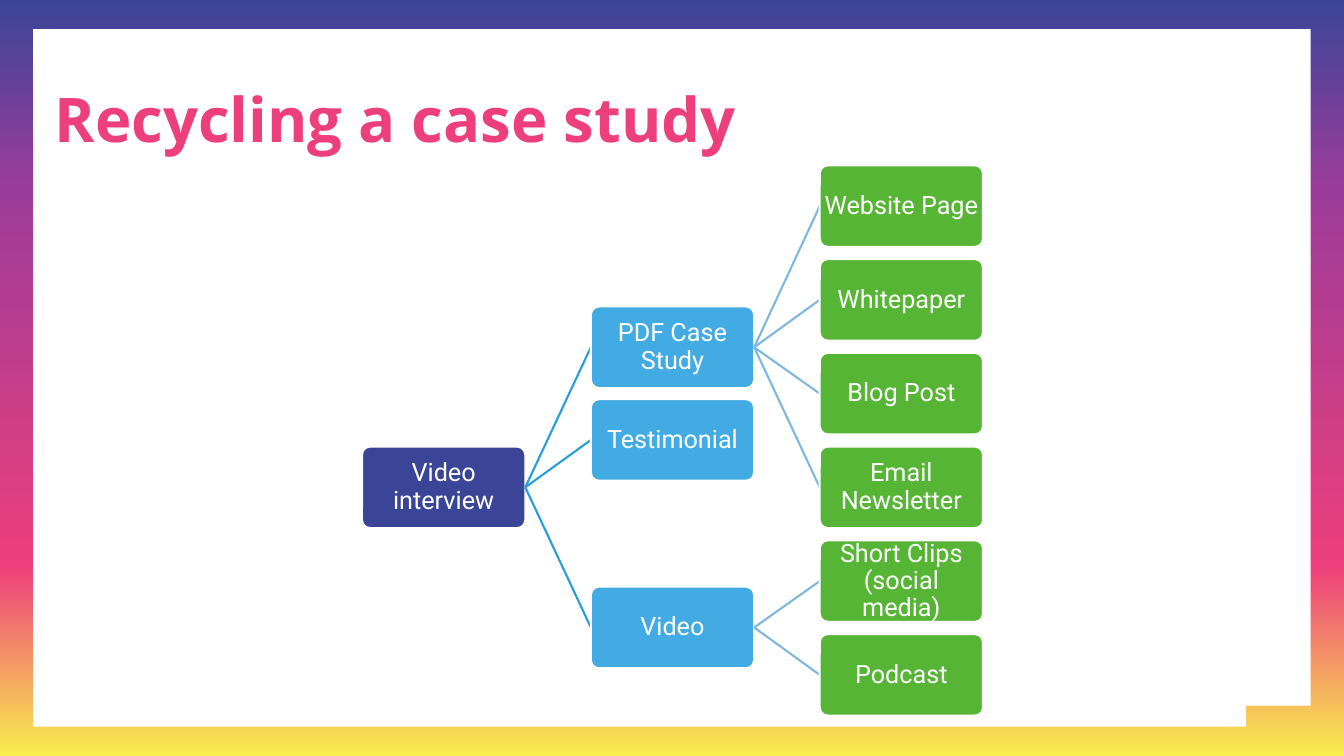
"""Build the slide that shows how one case study interview is recycled."""
from dataclasses import dataclass

import lxml.etree
import pptx
import pptx.dml.color
import pptx.enum.shapes
import pptx.enum.text
import pptx.oxml.ns
import pptx.shapes.autoshape
import pptx.slide
import pptx.util

RGBColor = pptx.dml.color.RGBColor
WHITE = RGBColor(0xFF, 0xFF, 0xFF)
INDIGO = RGBColor(0x3B, 0x45, 0x98)
PURPLE = RGBColor(0x9C, 0x3C, 0x9A)
PINK = RGBColor(0xED, 0x3F, 0x7B)
YELLOW = RGBColor(0xF9, 0xED, 0x4E)
SKY = RGBColor(0x42, 0xAB, 0xE3)
GREEN = RGBColor(0x57, 0xB5, 0x35)
DEEP_LINK = RGBColor(0x25, 0x9F, 0xD5)
PALE_LINK = RGBColor(0x7F, 0xB7, 0xDE)

EMU_PER_PX = 9144
PAGE_WIDTH, PAGE_HEIGHT = 1333, 750
NODE_WIDTH, NODE_HEIGHT = 162, 81
TREE_LEFT, TREE_TOP = 359, 164
COLUMN_PITCH, ROW_PITCH = 227, 93
NODE_FILLS = (INDIGO, SKY, GREEN)
LINK_COLORS = (DEEP_LINK, PALE_LINK)
BACKDROP_STOPS = ((0, INDIGO), (25, PURPLE), (75, PINK), (100, YELLOW))


@dataclass(frozen=True)
class Area:
    left: int
    top: int
    width: int
    height: int


@dataclass(frozen=True)
class Node:
    label: str
    row: float
    children: tuple["Node", ...] = ()


BACKDROP = Area(0, 0, PAGE_WIDTH, PAGE_HEIGHT)
PANELS = (Area(33, 29, 1267, 671), Area(33, 675, 1203, 46))
TITLE_AREA = Area(44, 74, 1245, 96)

INTERVIEW = Node("Video interview", 3, (
    Node("PDF Case Study", 1.5, (
        Node("Website Page", 0),
        Node("Whitepaper", 1),
        Node("Blog Post", 2),
        Node("Email Newsletter", 3),
    )),
    Node("Testimonial", 2.5),
    Node("Video", 4.5, (
        Node("Short Clips (social media)", 4),
        Node("Podcast", 5),
    )),
))


def px(length: int) -> pptx.util.Emu:
    """Turn whole pixels into EMU."""
    return pptx.util.Emu(length * EMU_PER_PX)


def bounds(area: Area) -> tuple[pptx.util.Emu, ...]:
    """Give left, top, width and height in EMU."""
    return px(area.left), px(area.top), px(area.width), px(area.height)


def add_box(page: pptx.slide.Slide, area: Area, fill: RGBColor,
            rounded: bool = False) -> pptx.shapes.autoshape.Shape:
    """Add a filled box without outline or shadow."""
    kinds = pptx.enum.shapes.MSO_SHAPE
    kind = kinds.ROUNDED_RECTANGLE if rounded else kinds.RECTANGLE
    box = page.shapes.add_shape(kind, *bounds(area))
    box.shadow.inherit = False
    box.fill.solid()
    box.fill.fore_color.rgb = fill
    box.line.fill.background()
    return box


def add_backdrop(page: pptx.slide.Slide) -> None:
    """Draw the gradient frame and the white panels over it."""
    box = add_box(page, BACKDROP, WHITE)
    box.fill.gradient()
    box.fill.gradient_angle = 270
    qn = pptx.oxml.ns.qn
    stops = box._element.spPr.find(qn("a:gradFill")).find(qn("a:gsLst"))
    for stop in list(stops):
        stops.remove(stop)
    for percent, color in BACKDROP_STOPS:
        stop = lxml.etree.SubElement(stops, qn("a:gs"), pos=str(percent * 1000))
        lxml.etree.SubElement(stop, qn("a:srgbClr"), val=str(color))
    for panel in PANELS:
        add_box(page, panel, WHITE)


def format_title(page: pptx.slide.Slide) -> None:
    """Place and style the title above the backdrop."""
    title = page.shapes.title
    page.shapes._spTree.append(title._element)
    title.left, title.top, title.width, title.height = bounds(TITLE_AREA)
    frame = title.text_frame
    frame.text = "Recycling a case study"
    frame.word_wrap = True
    frame.auto_size = pptx.enum.text.MSO_AUTO_SIZE.NONE
    frame.vertical_anchor = pptx.enum.text.MSO_ANCHOR.MIDDLE
    para = frame.paragraphs[0]
    para.alignment = pptx.enum.text.PP_ALIGN.LEFT
    para.line_spacing = 0.9
    font = para.runs[0].font
    font.name, font.size, font.bold = "Open Sans", pptx.util.Pt(44), True
    font.color.rgb = PINK


def node_area(node: Node, level: int) -> Area:
    """Find a node's place from its row and level."""
    return Area(TREE_LEFT + level * COLUMN_PITCH,
                TREE_TOP + round(node.row * ROW_PITCH), NODE_WIDTH, NODE_HEIGHT)


def add_node(page: pptx.slide.Slide, node: Node,
             level: int) -> pptx.shapes.autoshape.Shape:
    """Draw one labelled node."""
    box = add_box(page, node_area(node, level), NODE_FILLS[level], rounded=True)
    box.adjustments[0] = 0.1
    box.line.color.rgb = WHITE
    box.line.width = pptx.util.Pt(1.5)
    frame = box.text_frame
    frame.text = node.label
    frame.word_wrap = True
    frame.vertical_anchor = pptx.enum.text.MSO_ANCHOR.MIDDLE
    frame.margin_left = frame.margin_right = px(1)
    frame.margin_top = frame.margin_bottom = px(1)
    para = frame.paragraphs[0]
    para.alignment = pptx.enum.text.PP_ALIGN.CENTER
    para.line_spacing = 0.9
    font = para.runs[0].font
    font.name, font.size = "Roboto", pptx.util.Pt(18)
    font.color.rgb = WHITE
    return box


def add_branch(page: pptx.slide.Slide, node: Node,
               level: int = 0) -> pptx.shapes.autoshape.Shape:
    """Draw a node, its links and everything that grows from it."""
    box = add_node(page, node, level)
    for child in node.children:
        link = page.shapes.add_connector(
            pptx.enum.shapes.MSO_CONNECTOR.STRAIGHT, 0, 0, 0, 0)
        link.line.color.rgb = LINK_COLORS[level]
        link.line.width = pptx.util.Pt(1.5)
        lxml.etree.SubElement(link._element.spPr, pptx.oxml.ns.qn("a:effectLst"))
        child_box = add_branch(page, child, level + 1)
        link.begin_connect(box, 3)
        link.end_connect(child_box, 1)
    return box


def main() -> None:
    """Build and save the deck."""
    deck = pptx.Presentation()
    deck.slide_width, deck.slide_height = px(PAGE_WIDTH), px(PAGE_HEIGHT)
    page = deck.slides.add_slide(deck.slide_layouts.get_by_name("Title Only"))
    add_backdrop(page)
    format_title(page)
    add_branch(page, INTERVIEW)
    deck.save("out.pptx")


if __name__ == "__main__":
    main()
